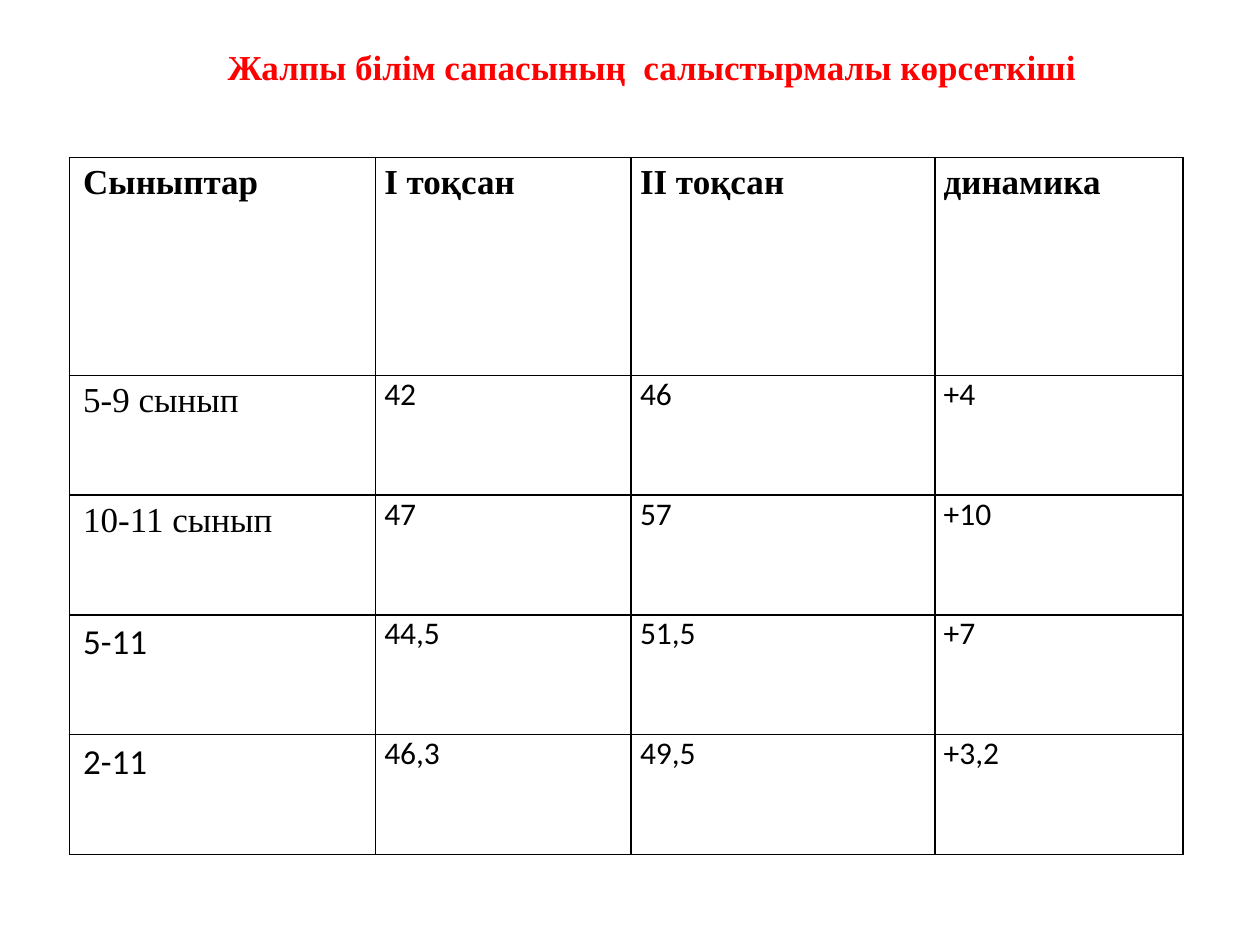
from lxml import etree
from pptx import Presentation
from pptx.dml.color import RGBColor
from pptx.enum import text
from pptx.oxml import ns
from pptx.util import Inches, Pt

TITLE = "Жалпы білім сапасының  салыстырмалы көрсеткіші"
ROWS = [
    ("Сыныптар", "I тоқсан", "II тоқсан", "динамика"),
    ("5-9 сынып", "42", "46", "+4"),
    ("10-11 сынып", "47", "57", "+10"),
    ("5-11 ", "44,5", "51,5", "+7"),
    ("2-11", "46,3", "49,5", "+3,2"),
]
WIDTHS = [2.43, 2.03, 2.41, 1.97]
HEIGHTS = [1.73] + [0.95] * 4
COLORS = {"title": "FF0000", "ink": "000000"}
SERIF, SANS = "Times New Roman", "Calibri"
ALIGN = text.PP_ALIGN


def put(item, values):
    for name, value in values.items():
        setattr(item, name, value)


def write(par, words, size, face, bold, color):
    run = par.add_run()
    run.text = words
    put(run.font, {"size": Pt(size), "name": face, "bold": bold})
    run.font.color.rgb = RGBColor.from_string(COLORS[color])


def frame(cell):
    props = cell._tc.get_or_add_tcPr()
    for spot, side in enumerate("LRTB"):
        line = etree.Element(ns.qn("a:ln" + side), w=str(Pt(1)))
        fill = etree.SubElement(line, ns.qn("a:solidFill"))
        etree.SubElement(fill, ns.qn("a:srgbClr"), val=COLORS["ink"])
        props.insert(spot, line)


def add_title(slide):
    title = slide.shapes.title
    put(title, {"left": Inches(1.17), "top": Inches(0.31),
                "width": Inches(7.81), "height": Inches(0.44)})
    put(title.text_frame, {"word_wrap": True,
                           "auto_size": text.MSO_AUTO_SIZE.SHAPE_TO_FIT_TEXT,
                           "vertical_anchor": text.MSO_ANCHOR.MIDDLE})
    par = title.text_frame.paragraphs[0]
    par.alignment = ALIGN.CENTER
    par._p.get_or_add_pPr().set("indent", str(Inches(0.2)))
    write(par, TITLE, 20, SERIF, True, "title")


def add_grid(slide):
    grid = slide.shapes.add_table(
        len(ROWS), len(WIDTHS), Inches(0.55), Inches(1.25),
        Inches(sum(WIDTHS)), Inches(sum(HEIGHTS))).table
    put(grid, {"first_row": False, "horz_banding": False})
    for col, width in zip(grid.columns, WIDTHS):
        col.width = Inches(width)
    for row, height in zip(grid.rows, HEIGHTS):
        row.height = Inches(height)
    for r, row in enumerate(ROWS):
        for c, words in enumerate(row):
            cell = grid.cell(r, c)
            put(cell, {"margin_left": Inches(0.07), "margin_right": Inches(0.07),
                       "margin_top": 0, "margin_bottom": 0})
            cell.fill.background()
            frame(cell)
            par = cell.text_frame.paragraphs[0]
            label = r == 0 or c == 0
            if label:
                put(par, {"alignment": ALIGN.JUSTIFY, "line_spacing": 1.15})
            if c == 0:
                par._p.get_or_add_pPr().set("marL", str(Inches(0.04)))
            face = SERIF if label and r < 3 else SANS
            write(par, words, 20 if label else 18, face, r == 0, "ink")


def main():
    """Build the slide comparing quality of learning by term."""
    deck = Presentation()
    put(deck, {"slide_width": Inches(10), "slide_height": Inches(7.5)})
    slide = deck.slides.add_slide(deck.slide_layouts[5])
    add_title(slide)
    add_grid(slide)
    deck.save("out.pptx")


if __name__ == "__main__":
    main()
